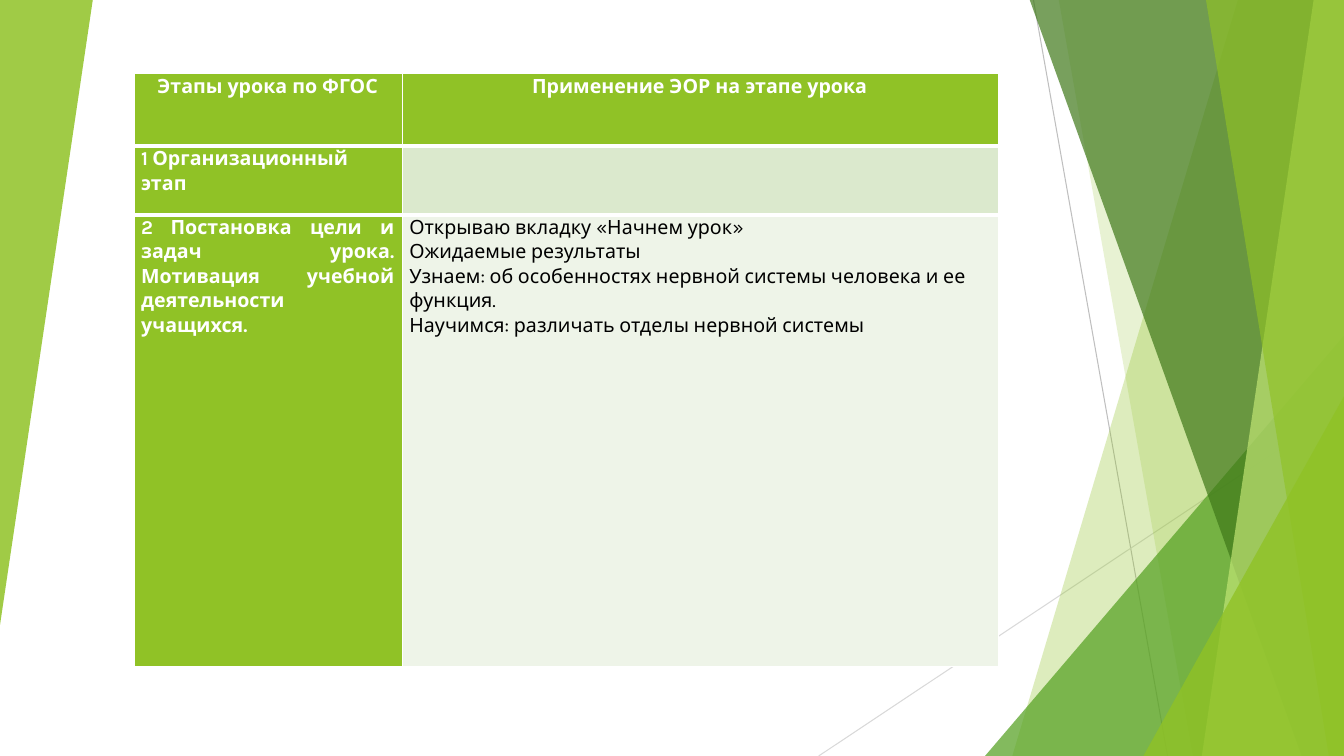
from lxml import etree
from pptx import Presentation
from pptx import util as u
from pptx.dml.color import RGBColor
from pptx.enum import shapes, text
from pptx.oxml.ns import qn

PX = 9144  # 100 px to the inch
WIDTH, HEIGHT = 1333, 750
FONT = "Karla"
COLORS = {
    "lime": "90C226", "green": "54A021", "forest": "3F7819", "pale": "C0E474",
    "gray": "BFBFBF", "light_gray": "D9D9D9", "white": "FFFFFF", "black": "000000",
    "band_dark": "DBE9CD", "band_light": "EEF4E8",
}


def rgb(name):
    return RGBColor.from_string(COLORS[name])


def paint(shape, color, opacity):
    """Fill the shape at an opacity in percent, with no outline or shadow."""
    shape.shadow.inherit = False
    shape.line.fill.background()
    shape.fill.solid()
    shape.fill.fore_color.rgb = rgb(color)
    color_node = shape._element.spPr.find(qn("a:solidFill"))[0]
    etree.SubElement(color_node, qn("a:alpha"), val=str(opacity * 1000))


presentation = Presentation()
presentation.slide_width = WIDTH * PX
presentation.slide_height = HEIGHT * PX
slide = presentation.slides.add_slide(presentation.slide_layouts[6])

# Thin lines behind the facets
for x1, y1, x2, y2, color in [
    (1025, 0, 1158, HEIGHT, "gray"),
    (WIDTH, 403, 812, HEIGHT, "light_gray"),
]:
    line = slide.shapes.add_connector(
        shapes.MSO_CONNECTOR.STRAIGHT, x1 * PX, y1 * PX, x2 * PX, y2 * PX)
    line.line.color.rgb = rgb(color)
    line.line.width = u.Pt(0.75)
    etree.SubElement(line._element.spPr, qn("a:effectLst"))

# Facets from back to front: a band gives its left edge at the top and the bottom
# and runs to the right side; a triangle gives left, top, width, height, rotation
for kind, place, color, opacity in [
    ("band", (1228, 1004), "lime", 30),
    ("band", (1050, 1183), "lime", 20),
    ("triangle", (977, 333, 356, 417, 0), "green", 72),
    ("band", (1021, 1291), "forest", 70),
    ("band", (1303, 1192), "pale", 70),
    ("band", (1196, 1318), "lime", 65),
    ("triangle", (1134, 393, 199, 357, 0), "lime", 80),
    ("triangle", (0, 0, 92, 620, 180), "lime", 85),
]:
    if kind == "band":
        top_x, bottom_x = place
        builder = slide.shapes.build_freeform(top_x, -1, scale=PX)
        builder.add_line_segments([(WIDTH, -1), (WIDTH, HEIGHT), (bottom_x, HEIGHT)])
        facet = builder.convert_to_shape()
    else:
        *box, rotation = place
        facet = slide.shapes.add_shape(
            shapes.MSO_SHAPE.ISOSCELES_TRIANGLE, *[value * PX for value in box])
        facet.adjustments[0] = 1
        facet.rotation = rotation
    paint(facet, color, opacity)

# Lesson table: each cell has a fill, an alignment and paragraphs made of lines;
# a line is a list of (text, size) runs
ALIGN = text.PP_ALIGN
rows = [
    [("lime", ALIGN.CENTER, [[[("Этапы урока по ФГОС", 14)]]]),
     ("lime", ALIGN.CENTER, [[[("Применение ЭОР на этапе урока", 14)]]])],
    [("lime", ALIGN.LEFT, [[[("1", 14), (" ", 12), ("Организационный этап", 14)]]]),
     ("band_dark", ALIGN.LEFT, [])],
    [("lime", ALIGN.JUSTIFY, [[[
        ("2", 14), (" ", 12),
        ("Постановка цели и задач урока. Мотивация учебной деятельности учащихся. ", 14)]]]),
     ("band_light", ALIGN.LEFT, [
         [[("Открываю вкладку «Начнем урок»", 14)]],
         [[("Ожидаемые результаты", 14)],
          [("Узнаем: об особенностях нервной системы человека и ее функция.", 14)],
          [("Научимся: различать отделы нервной системы", 14)]]])],
]
column_widths = [266, 591]
row_heights = [72, 68, 448]
table = slide.shapes.add_table(
    len(rows), len(column_widths), 133 * PX, 73 * PX,
    sum(column_widths) * PX, sum(row_heights) * PX).table
table.first_col = True
for column, width in zip(table.columns, column_widths):
    column.width = width * PX
for row, height in zip(table.rows, row_heights):
    row.height = height * PX

margins = {"margin_left": 7 * PX, "margin_right": 8 * PX, "margin_top": 0, "margin_bottom": 0}
header_rule = {0: "a:lnB", 1: "a:lnT"}  # the edge that each row shares with the thick rule
for row_index, row in enumerate(rows):
    for column_index, (fill, alignment, paragraphs) in enumerate(row):
        cell = table.cell(row_index, column_index)
        cell.fill.solid()
        cell.fill.fore_color.rgb = rgb(fill)
        for name, value in margins.items():
            setattr(cell, name, value)
        if row_index in header_rule:
            border = etree.Element(qn(header_rule[row_index]), w=str(u.Pt(3)))
            border_fill = etree.SubElement(border, qn("a:solidFill"))
            etree.SubElement(border_fill, qn("a:srgbClr"), val=COLORS["white"])
            cell._tc.tcPr.insert(0, border)
        heading = fill == "lime"
        for index, lines in enumerate(paragraphs):
            frame = cell.text_frame
            paragraph = frame.add_paragraph() if index else frame.paragraphs[0]
            paragraph.alignment = alignment
            paragraph.line_spacing = 1.07
            for line_index, runs in enumerate(lines):
                if line_index:
                    paragraph.add_line_break()
                for words, size in runs:
                    run = paragraph.add_run()
                    run.text = words
                    run_format = {"name": FONT, "size": u.Pt(size), "bold": heading}
                    for name, value in run_format.items():
                        setattr(run.font, name, value)
                    run.font.color.rgb = rgb("white" if heading else "black")

presentation.save("out.pptx")
